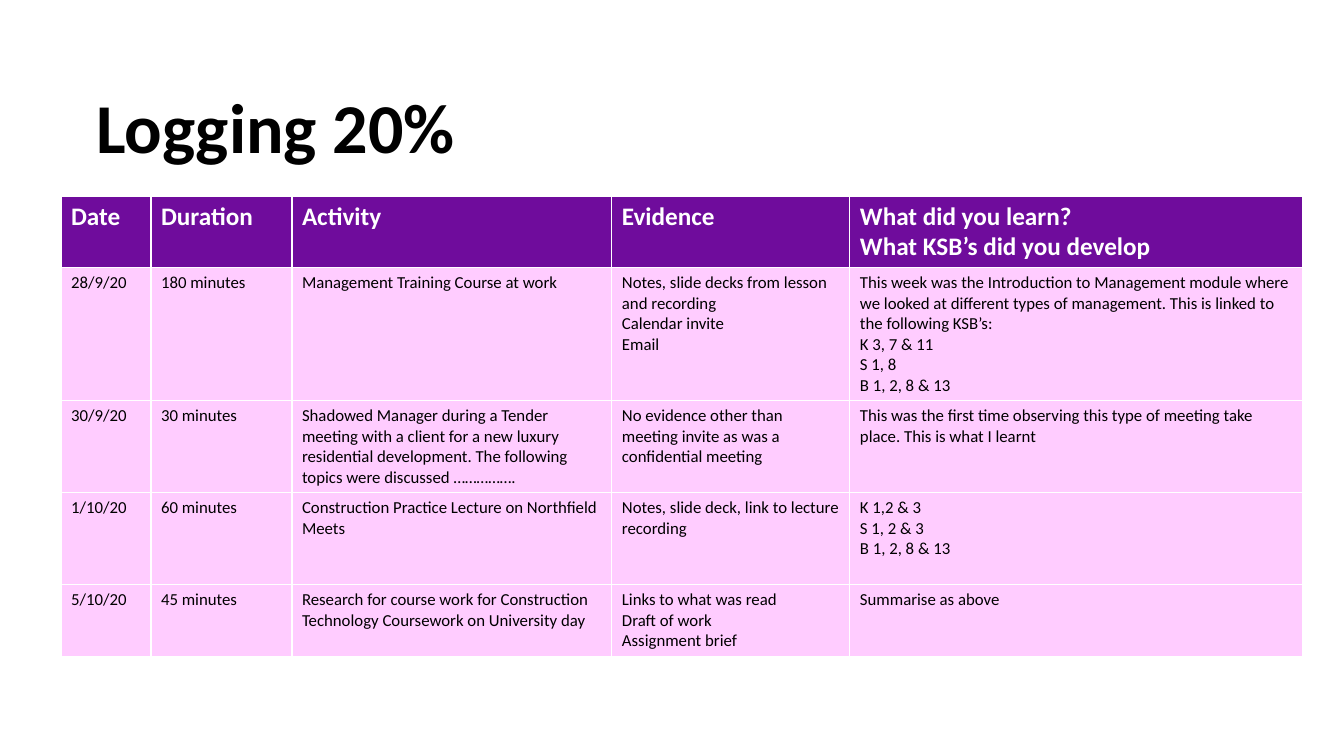
import pptx
import pptx.util
import pptx.dml.color
import pptx.enum.text

TITLE = "Logging 20%"
HEAD = ("Date", "Duration", "Activity", "Evidence",
        "What did you learn?\nWhat KSB’s did you develop")
LOG = [
    ("28/9/20", "180 minutes", "Management Training Course at work",
     "Notes, slide decks from lesson and recording\nCalendar invite\nEmail",
     "This week was the Introduction to Management module where we looked at "
     "different types of management. This is linked to the following KSB’s:\n"
     "K 3, 7 & 11\nS 1, 8\nB 1, 2, 8 & 13"),
    ("30/9/20", "30 minutes",
     "Shadowed Manager during a Tender meeting with a client for a new luxury "
     "residential development. The following topics were discussed …………….",
     "No evidence other than meeting invite as was a confidential meeting",
     "This was the first time observing this type of meeting take place. "
     "This is what I learnt"),
    ("1/10/20", "60 minutes", "Construction Practice Lecture on Northfield Meets",
     "Notes, slide deck, link to lecture recording",
     "K 1,2 & 3\nS 1, 2 & 3\nB 1, 2, 8 & 13"),
    ("5/10/20", "45 minutes",
     "Research for course work for Construction Technology Coursework on University day",
     "Links to what was read\nDraft of work\nAssignment brief",
     "Summarise as above"),
]
WIDTHS = (90, 141, 320, 238, 453)
HEIGHTS = (70, 133, 92, 92, 72)
LEFT, TOP = 61, 196
FONT = "Calibri"
PURPLE, PINK, WHITE, BLACK = "6F0C9C", "FFCCFF", "FFFFFF", "000000"
SCALE = 914400 / 100.8


def px(n):
    return pptx.util.Emu(round(n * SCALE))


def color(code):
    return pptx.dml.color.RGBColor.from_string(code)


def style(frame, size, code, bold):
    for para in frame.paragraphs:
        para.font.name = FONT
        para.font.size = pptx.util.Pt(size)
        para.font.bold = bold
        para.font.color.rgb = color(code)


def add_title(slide):
    title = slide.shapes.title
    title.left, title.top, title.width, title.height = map(px, (86, 88, 1159, 110))
    frame = title.text_frame
    frame.text = TITLE
    frame.vertical_anchor = pptx.enum.text.MSO_ANCHOR.TOP
    para = frame.paragraphs[0]
    para.alignment = pptx.enum.text.PP_ALIGN.LEFT
    para.line_spacing = 0.9
    style(frame, 50, BLACK, True)


def add_log(slide):
    rows = [HEAD] + LOG
    table = slide.shapes.add_table(
        len(rows), len(HEAD), px(LEFT), px(TOP),
        px(sum(WIDTHS)), px(sum(HEIGHTS))).table
    for col, width in zip(table.columns, WIDTHS):
        col.width = px(width)
    for row, height in zip(table.rows, HEIGHTS):
        row.height = px(height)
    for r, row in enumerate(rows):
        fill, size, ink = (PINK, 12, BLACK) if r else (PURPLE, 18, WHITE)
        for c, text in enumerate(row):
            cell = table.cell(r, c)
            cell.text = text
            cell.fill.solid()
            cell.fill.fore_color.rgb = color(fill)
            style(cell.text_frame, size, ink, r == 0)


def main():
    deck = pptx.Presentation()
    deck.slide_width, deck.slide_height = px(1344), px(756)
    slide = deck.slides.add_slide(deck.slide_layouts[5])
    add_title(slide)
    add_log(slide)
    deck.save("out.pptx")


if __name__ == "__main__":
    main()
